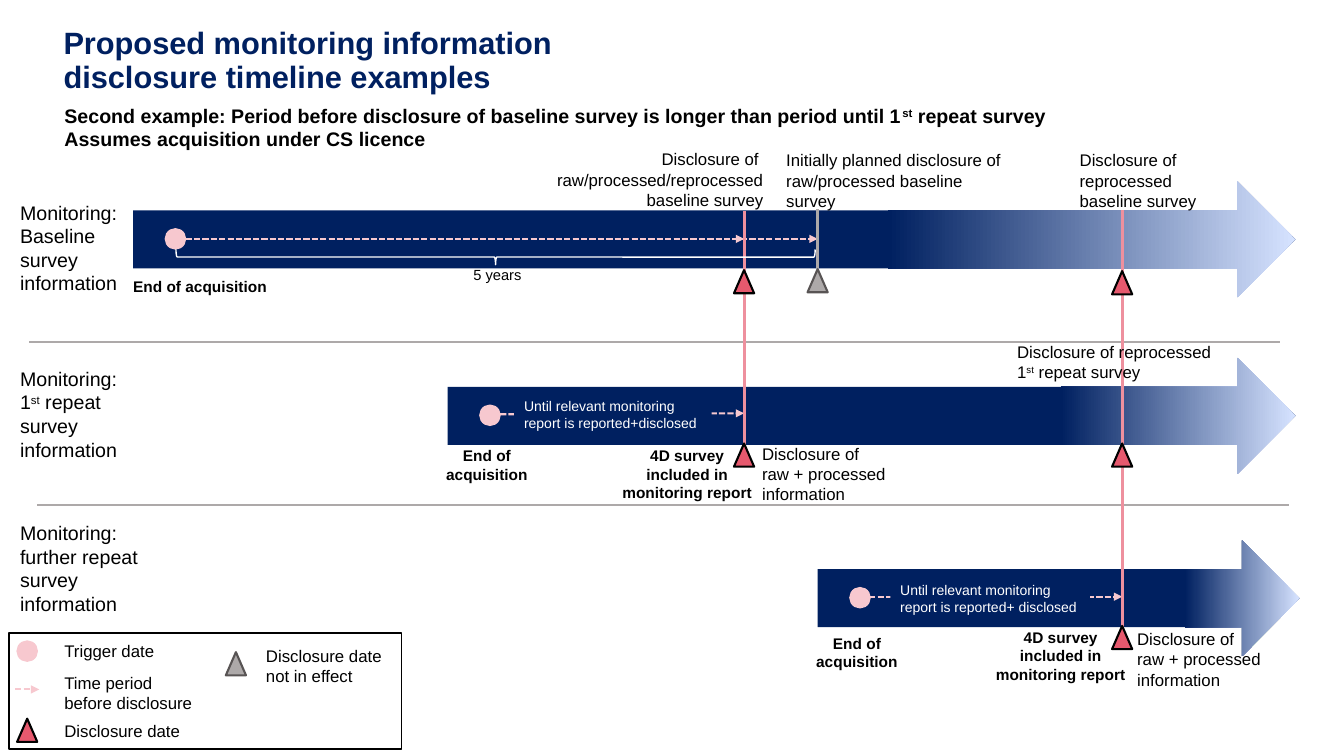
from dataclasses import dataclass
from typing import Any

from lxml.etree import SubElement
from pptx import Presentation
from pptx.dml.color import RGBColor
from pptx.enum.dml import MSO_LINE
from pptx.enum.shapes import MSO_CONNECTOR, MSO_SHAPE as Shp
from pptx.enum.text import MSO_ANCHOR as Anchor, MSO_AUTO_SIZE as Fit, PP_ALIGN as Al
from pptx.oxml.ns import qn
from pptx.util import Inches, Pt

HEX = {
    "navy": "002060", "ice": "D6E3FF", "pink": "F7C8CF", "rose": "EE909E",
    "red": "E6596E", "grey": "ADA9A9", "dark": "585454",
    "black": "000000", "white": "FFFFFF",
}
COLUMNS, ROWS = 133.3, 75

prs = Presentation()
prs.slide_width, prs.slide_height = Inches(13.33), Inches(7.5)
s = prs.slides.add_slide(prs.slide_layouts[5])


@dataclass
class Lane:
    left: float
    top: float
    width: float
    fade: float
    label_top: float
    label: str


@dataclass
class Label:
    left: float
    top: float
    width: float
    height: float
    text: str
    style: str = "note"
    align: Al = Al.LEFT


@dataclass
class Line:
    x1: float
    y1: float
    x2: float
    y2: float
    color: str
    width: float
    arrow: bool = False


@dataclass
class Marker:
    left: float
    top: float
    active: bool = True


STYLES = {
    "title": {"size": Pt(22), "bold": True, "color": "navy"},
    "subtitle": {"size": Pt(14), "bold": True, "color": "black"},
    "lane": {"size": Pt(14), "bold": False, "color": "black"},
    "note": {"size": Pt(12), "bold": False, "color": "black"},
    "event": {"size": Pt(11), "bold": True, "color": "black"},
    "span": {"size": Pt(10.5), "bold": False, "color": "black"},
    "period": {"size": Pt(10), "bold": False, "color": "white"},
}


def rgb(name: str) -> RGBColor:
    return RGBColor.from_string(HEX[name])


def col(n: float) -> int:
    return round(prs.slide_width * n / COLUMNS)


def row(n: float) -> int:
    return round(prs.slide_height * n / ROWS)


def frame(left: float, top: float, width: float, height: float) -> tuple:
    return col(left), row(top), col(width), row(height)


def write(tf: Any, text: str, style: str, align: Al = Al.LEFT, **layout: Any) -> None:
    for name, value in {"word_wrap": True, "vertical_anchor": Anchor.TOP, **layout}.items():
        setattr(tf, name, value)
    for i, para in enumerate(text.split("\n")):
        p = tf.add_paragraph() if i else tf.paragraphs[0]
        p.alignment = align
        for j, line in enumerate(para.split("\v")):
            if j:
                p.add_line_break()
            for k, piece in enumerate(line.split("^")):
                r = p.add_run()
                r.text = piece
                r.font.name = "Arial"
                for name, value in STYLES[style].items():
                    if name == "color":
                        r.font.color.rgb = rgb(value)
                    else:
                        setattr(r.font, name, value)
                if k % 2:
                    r._r.get_or_add_rPr().set("baseline", "30000")


def add_label(lb: Label) -> None:
    tb = s.shapes.add_textbox(*frame(lb.left, lb.top, lb.width, lb.height))
    write(tb.text_frame, lb.text, lb.style, lb.align, auto_size=Fit.SHAPE_TO_FIT_TEXT)


def add_shape(kind: Shp, box: tuple, fill: str = "", line: str = "", width: float = 1) -> Any:
    sp = s.shapes.add_shape(kind, *frame(*box))
    sp.shadow.inherit = False
    if fill:
        sp.fill.solid()
        sp.fill.fore_color.rgb = rgb(fill)
    else:
        sp.fill.background()
    if line:
        sp.line.color.rgb = rgb(line)
        sp.line.width = Pt(width)
    else:
        sp.line.fill.background()
    return sp


def add_line(ln: Line) -> None:
    cx = s.shapes.add_connector(
        MSO_CONNECTOR.STRAIGHT, col(ln.x1), row(ln.y1), col(ln.x2), row(ln.y2))
    cx.line.color.rgb = rgb(ln.color)
    cx.line.width = Pt(ln.width)
    if ln.arrow:
        cx.line.dash_style = MSO_LINE.SQUARE_DOT
        SubElement(cx.line._get_or_add_ln(), qn("a:tailEnd"), type="triangle")
    SubElement(cx._element.spPr, qn("a:effectLst"))


def add_dot(left: float, top: float) -> None:
    add_shape(Shp.OVAL, (left, top, 2, 2), "pink", "pink")


def add_marker(m: Marker) -> None:
    fill, line = ("red", "black") if m.active else ("grey", "dark")
    add_shape(Shp.FLOWCHART_EXTRACT, (m.left, m.top, 2, 2.3), fill, line, 1.5)


def add_lane(ln: Lane) -> None:
    add_shape(Shp.RIGHT_ARROW, (ln.left, ln.top, ln.width, 11.5), "navy")
    fade = add_shape(Shp.RIGHT_ARROW, (ln.left + ln.width - ln.fade, ln.top, ln.fade, 11.5))
    fade.fill.gradient()
    fade.fill.gradient_angle = 180
    for stop, color, position in zip(fade.fill.gradient_stops, ("ice", "navy"), (0, 1)):
        stop.color.rgb = rgb(color)
        stop.position = position
    add_dot(ln.left + 3.2, ln.top + 4.7)
    add_label(Label(1, ln.label_top, 14.2, 10.4, ln.label, "lane"))


def add_period(lb: Label) -> None:
    sp = add_shape(Shp.RECTANGLE, (lb.left, lb.top, lb.width, lb.height), "navy")
    write(sp.text_frame, lb.text, lb.style, vertical_anchor=Anchor.MIDDLE)


LANES = [
    Lane(13.2, 18, 115.3, 40.4, 19.4, "Monitoring:\nBaseline survey information"),
    Lane(44.4, 35.5, 84.1, 23.3, 35.9, "Monitoring:\n1^st^ repeat survey information"),
    Lane(81.1, 53.6, 47.8, 11.4, 51.2, "Monitoring:\nfurther repeat survey information"),
]
LINES = [
    Line(3.7, 50.1, 127.8, 50.1, "grey", 1.5),
    Line(2.9, 33.9, 127, 33.9, "grey", 1.5),
    Line(18.4, 23.7, 81.1, 23.7, "pink", 1.5, True),
    Line(18.4, 23.7, 73.8, 23.7, "pink", 1.5, True),
    Line(49.6, 41.1, 73.8, 41, "pink", 1.5, True),
    Line(86.2, 59.2, 111.3, 59.2, "pink", 1.5, True),
    Line(1.5, 68.4, 3.9, 68.4, "pink", 1.5, True),
    Line(111.3, 62.6, 111.3, 20.8, "rose", 2.25),
    Line(81.1, 26.6, 81.1, 20.7, "grey", 2.25),
    Line(73.8, 44.5, 73.8, 20.9, "rose", 2.25),
]
PERIODS = [
    Label(51, 38.9, 19.6, 4.4, "Until relevant monitoring report is reported+disclosed", "period"),
    Label(88.3, 57.2, 19.8, 4.4, "Until relevant monitoring report is reported+ disclosed", "period"),
]
RAW = "Disclosure of\nraw + processed information"
ENDED = "End of acquisition"
REPORTED = "4D survey included in monitoring report"
LABELS = [
    Label(5.4, 9.8, 103.3, 5.7, "Second example: Period before disclosure of baseline survey is longer "
          "than period until 1^st^ repeat survey\nAssumes acquisition under CS licence", "subtitle"),
    Label(52, 14.3, 24.7, 7.1, "Disclosure of \vraw/processed/reprocessed baseline survey", align=Al.RIGHT),
    Label(77, 14.4, 24.7, 7.1, "Initially planned disclosure of \vraw/processed baseline survey"),
    Label(106.1, 14.4, 15.1, 7.1, "Disclosure of reprocessed baseline survey"),
    Label(99.9, 33.4, 22, 5, "Disclosure of reprocessed 1^st^ repeat survey"),
    Label(74.6, 43.5, 15.8, 7.1, RAW),
    Label(111.8, 61.9, 17.5, 7.1, RAW),
    Label(12, 27, 15.7, 2.9, ENDED, "event", Al.CENTER),
    Label(42.3, 43.8, 12, 4.7, ENDED, "event", Al.CENTER),
    Label(79, 62.4, 12, 4.7, ENDED, "event", Al.CENTER),
    Label(60.4, 43.8, 15.5, 6.6, REPORTED, "event", Al.CENTER),
    Label(97.7, 61.8, 15, 6.6, REPORTED, "event", Al.CENTER),
    Label(44.4, 25.9, 8.3, 2.8, "5 years", "span", Al.RIGHT),
    Label(5.4, 63.1, 16.3, 3, "Trigger date"),
    Label(5.4, 66.2, 15, 5, "Time period before disclosure"),
    Label(5.4, 71, 16.3, 3, "Disclosure date"),
    Label(25.4, 63.6, 14.4, 5, "Disclosure date not in effect"),
]
MARKERS = [
    Marker(72.8, 26.8), Marker(72.8, 44), Marker(80.1, 26.7, False),
    Marker(110.3, 26.9), Marker(110.3, 44), Marker(110.3, 62.1),
    Marker(1.7, 71.3), Marker(22.4, 64.7, False),
]


def main() -> None:
    title = s.shapes.title
    title.left, title.top, title.width, title.height = frame(6.3, 2.8, 79.9, 5.5)
    write(title.text_frame, "Proposed monitoring information \vdisclosure timeline examples", "title",
          margin_left=0, margin_top=0, auto_size=Fit.NONE)
    title.text_frame.paragraphs[0].line_spacing = 0.9
    for draw, items in ((add_lane, LANES), (add_line, LINES), (add_period, PERIODS),
                        (add_label, LABELS), (add_marker, MARKERS)):
        for item in items:
            draw(item)
    add_shape(Shp.RIGHT_BRACE, (48.4, -6.2, 1.5, 63.4), line="white").rotation = 90
    add_shape(Shp.RECTANGLE, (0.9, 62.8, 38.9, 11.5), line="black")
    add_dot(1.7, 63.6)
    prs.save("out.pptx")


if __name__ == "__main__":
    main()
